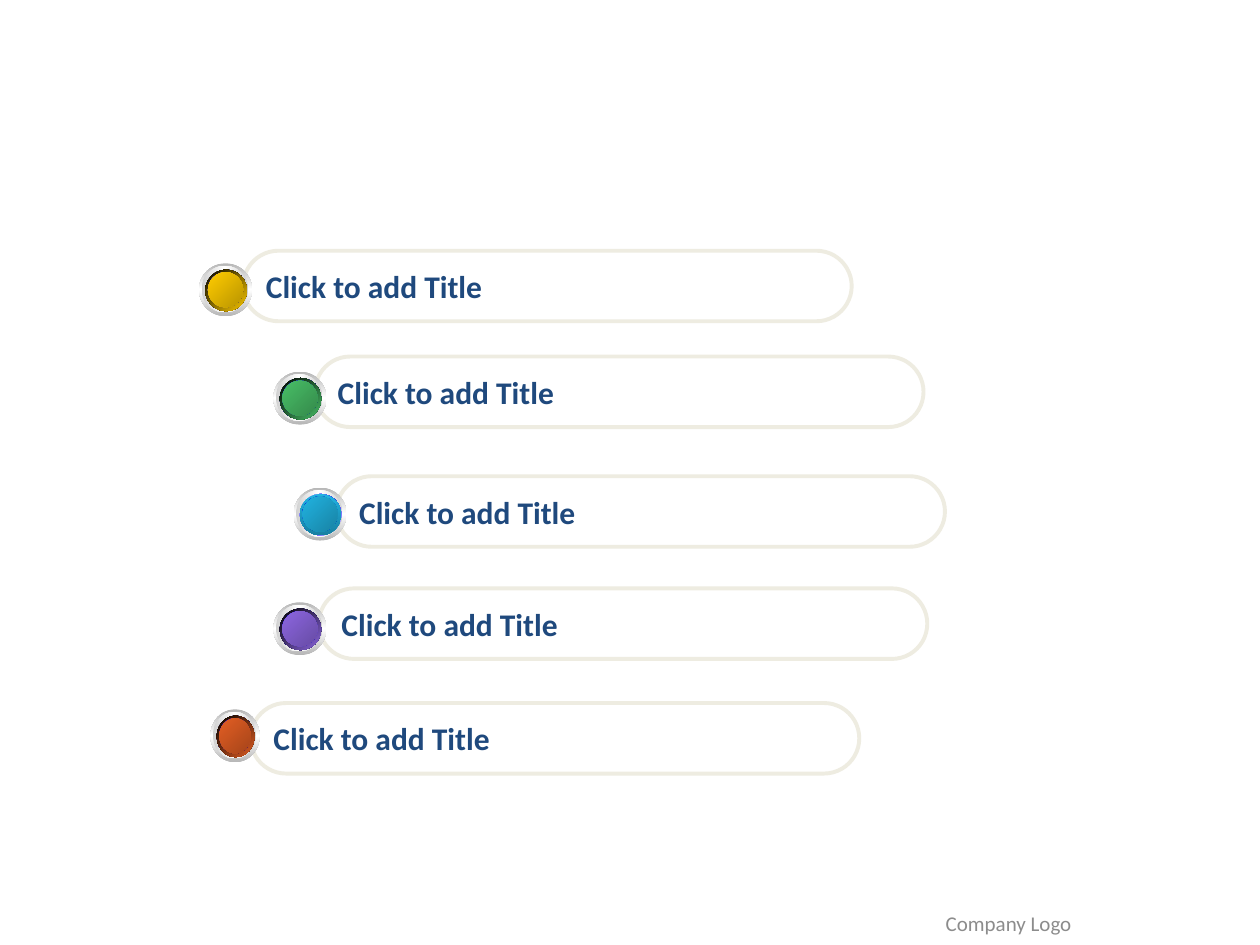
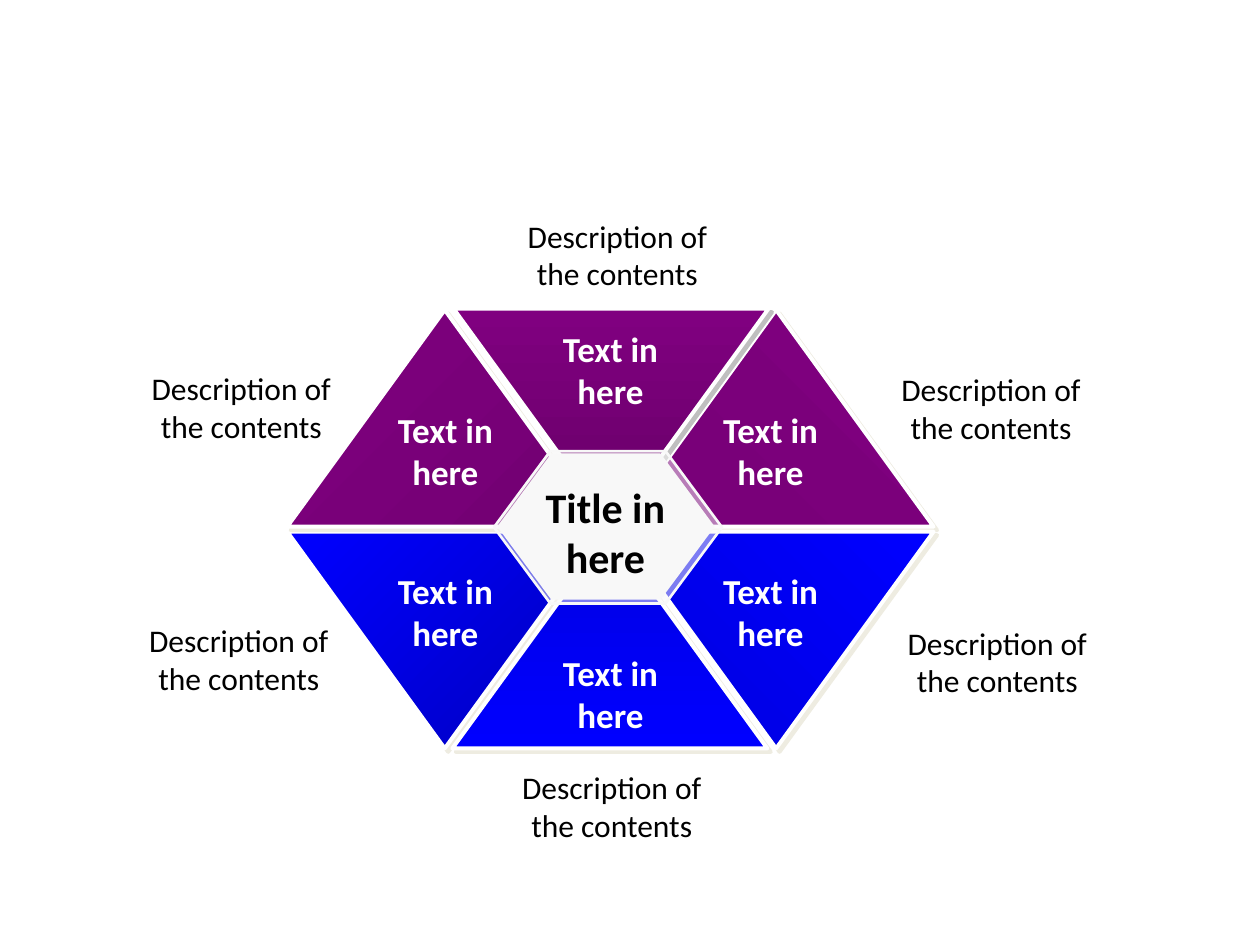
from pptx import Presentation
from pptx.util import Inches, Pt
from pptx.dml.color import RGBColor
from pptx.enum.shapes import MSO_SHAPE as SHAPE
from pptx.enum.text import PP_ALIGN as ALIGN, MSO_ANCHOR as ANCHOR, MSO_AUTO_SIZE as AUTO
from pptx.oxml import parse_xml
from pptx.oxml.ns import nsdecls, qn

FONT = "Calibri"
C = {
    "white": "FFFFFF", "black": "000000", "cream": "EEECE1", "navy": "1F497D",
    "footer": "8C8C8C", "silver": "B6B6B6", "pale": "D1D1D1", "blue": "0000FF",
    "deep_blue": "0000C3", "purple": "800080", "gray": "808080", "hub": "F8F8F8",
    "gold": "FFCC00", "green": "48BE67", "cyan": "21B3E1", "violet": "8D67E1",
    "orange": "E35E23",
}


def gradient(sp, colors, angle):
    sp.fill.gradient()
    old = sp._element.spPr.find(qn("a:gradFill"))
    step = 100000 // (len(colors) - 1)
    stops = "".join(
        f'<a:gs pos="{i * step}"><a:srgbClr val="{c}"/></a:gs>' for i, c in enumerate(colors))
    new = parse_xml(
        f'<a:gradFill {nsdecls("a")} rotWithShape="1"><a:gsLst>{stops}</a:gsLst>'
        f'<a:lin ang="{angle * 60000}" scaled="1"/></a:gradFill>')
    old.getparent().replace(old, new)


def write(sp, text, size, color, bold=False, align=ALIGN.CENTER):
    tf = sp.text_frame
    tf.word_wrap = True
    tf.text = text
    for p in tf.paragraphs:
        p.alignment = align
        for r in p.runs:
            r.font.name, r.font.size, r.font.bold = FONT, Pt(size), bold
            r.font.color.rgb = RGBColor.from_string(color)
    return tf


prs = Presentation()
prs.slide_width, prs.slide_height = Inches(10), Inches(7.5)
blank = prs.slide_layouts[6]

s = prs.slides.add_slide(blank)
sp = s.shapes.add_textbox(Inches(6.42), Inches(7.15), Inches(3.17), Inches(0.35))
write(sp, "Company Logo", 12, C["footer"]).vertical_anchor = ANCHOR.MIDDLE

for x, y in [(1.99, 5.58), (2.53, 4.67), (2.67, 3.78), (2.5, 2.83), (1.93, 1.99)]:
    sp = s.shapes.add_shape(
        SHAPE.ROUNDED_RECTANGLE, Inches(x), Inches(y), Inches(4.83), Inches(0.56))
    sp.adjustments[0] = 0.5
    sp.shadow.inherit = False
    sp.fill.background()
    sp.line.color.rgb = RGBColor.from_string(C["cream"])
    sp.line.width = Pt(2.25)
    tf = write(sp, "Click to add Title", 18, C["navy"], True, ALIGN.LEFT)
    tf.word_wrap = False
    tf.vertical_anchor = ANCHOR.MIDDLE

buttons = [
    (1.58, 2.09, 0.42, C["gold"], "BA9500", (C["black"], C["gold"]), 45),
    (2.17, 2.95, 0.42, C["green"], "358B4B", (C["black"], C["green"]), 45),
    (2.33, 3.87, 0.42, C["cyan"], "1883A4", (C["cyan"], "1880A1"), 90),
    (2.17, 4.78, 0.42, C["violet"], "674BA4", (C["black"], C["violet"]), 45),
    (1.67, 5.63, 0.39, C["orange"], "A6451A", (C["black"], C["orange"]), 45),
]
for x, y, width, light, dark, rim, rim_angle in buttons:
    layers = [
        (0, 0, (C["silver"], C["white"], C["silver"]), 90),
        (0.02, 0.05, (C["pale"], C["white"], C["pale"]), 0),
        (0.05, 0.09, (C["white"], C["blue"], C["white"]), 45),
        (0.05, 0.09, rim, rim_angle),
        (0.07, 0.14, (C["deep_blue"], C["blue"], C["deep_blue"]), 315),
        (0.07, 0.14, (light, dark), 45),
    ]
    button = s.shapes.add_group_shape()
    for inset, trim, colors, angle in layers:
        sp = button.shapes.add_shape(
            SHAPE.OVAL, Inches(x + inset), Inches(y + inset),
            Inches(width - trim), Inches(0.42 - trim))
        sp.shadow.inherit = False
        sp.line.fill.background()
        gradient(sp, colors, angle)

s = prs.slides.add_slide(blank)
triangles = [
    (2.28, 4.22, True, (C["blue"], "0000BE"), 315, C["cream"], 100),
    (4.91, 2.46, False, ("760076", C["purple"]), 315, C["cream"], 100),
    (2.28, 2.46, False, (C["purple"], "720072"), 45, C["cream"], 100),
    (3.6, 2.45, True, ("670067", C["purple"]), 90, C["gray"], 50),
    (3.59, 4.22, False, ("0000E2", C["blue"]), 90, C["cream"], 100),
    (4.91, 4.22, True, ("0000DE", C["blue"]), 45, C["cream"], 100),
]
for x, y, flipped, colors, angle, shade, alpha in triangles:
    sp = s.shapes.add_shape(
        SHAPE.ISOSCELES_TRIANGLE, Inches(x), Inches(y), Inches(2.5), Inches(1.72))
    if flipped:
        sp._element.spPr.find(qn("a:xfrm")).set("flipV", "1")
    gradient(sp, colors, angle)
    sp.line.color.rgb = RGBColor.from_string(C["white"])
    sp.line.width = Pt(2.25)
    sp.shadow.inherit = False
    sp._element.spPr.find(qn("a:effectLst")).append(parse_xml(
        f'<a:outerShdw {nsdecls("a")} dist="{Pt(2.8)}" dir="2700000" algn="ctr" '
        f'rotWithShape="0"><a:srgbClr val="{shade}"><a:alpha val="{alpha * 1000}"/>'
        f'</a:srgbClr></a:outerShdw>'))

hub = s.shapes.add_group_shape()
for x, y, w, h, alpha in [(3.92, 3.58, 1.81, 1.21, 50), (3.96, 3.61, 1.7, 1.14, 100)]:
    sp = hub.shapes.add_shape(SHAPE.HEXAGON, Inches(x), Inches(y), Inches(w), Inches(h))
    sp.adjustments[0] = 0.37
    sp.shadow.inherit = False
    sp.fill.solid()
    sp.fill.fore_color.rgb = RGBColor.from_string(C["hub"])
    sp._element.spPr.find(qn("a:solidFill"))[0].append(
        parse_xml(f'<a:alpha {nsdecls("a")} val="{alpha * 1000}"/>'))
    sp.line.color.rgb = RGBColor.from_string(C["hub"])
    sp.line.width = Pt(1.5)

label_spots = [(4.17, 2.55), (2.86, 4.47), (5.44, 4.47), (4.17, 5.12), (2.86, 3.19), (5.44, 3.19)]
side_spots = [(0.94, 2.88), (6.89, 2.89), (0.92, 4.88), (6.94, 4.9)]
texts = [(x, y, 1.35, 0.77, "Text in here", 20, C["white"], True) for x, y in label_spots]
texts += [(x, y, 1.95, 0.7, "Description of the contents", 18, C["black"], False)
          for x, y in side_spots]
texts += [(x, y, w, 0.7, "Description of\nthe contents", 18, C["black"], False)
          for x, y, w in [(3.22, 1.67, 3.36), (3.51, 6.05, 2.69)]]
texts.append((4.14, 3.77, 1.33, 0.9, "Title in here", 24, C["black"], True))
for x, y, w, h, text, size, color, bold in texts:
    sp = s.shapes.add_textbox(Inches(x), Inches(y), Inches(w), Inches(h))
    write(sp, text, size, color, bold).auto_size = AUTO.SHAPE_TO_FIT_TEXT

prs.save("out.pptx")
